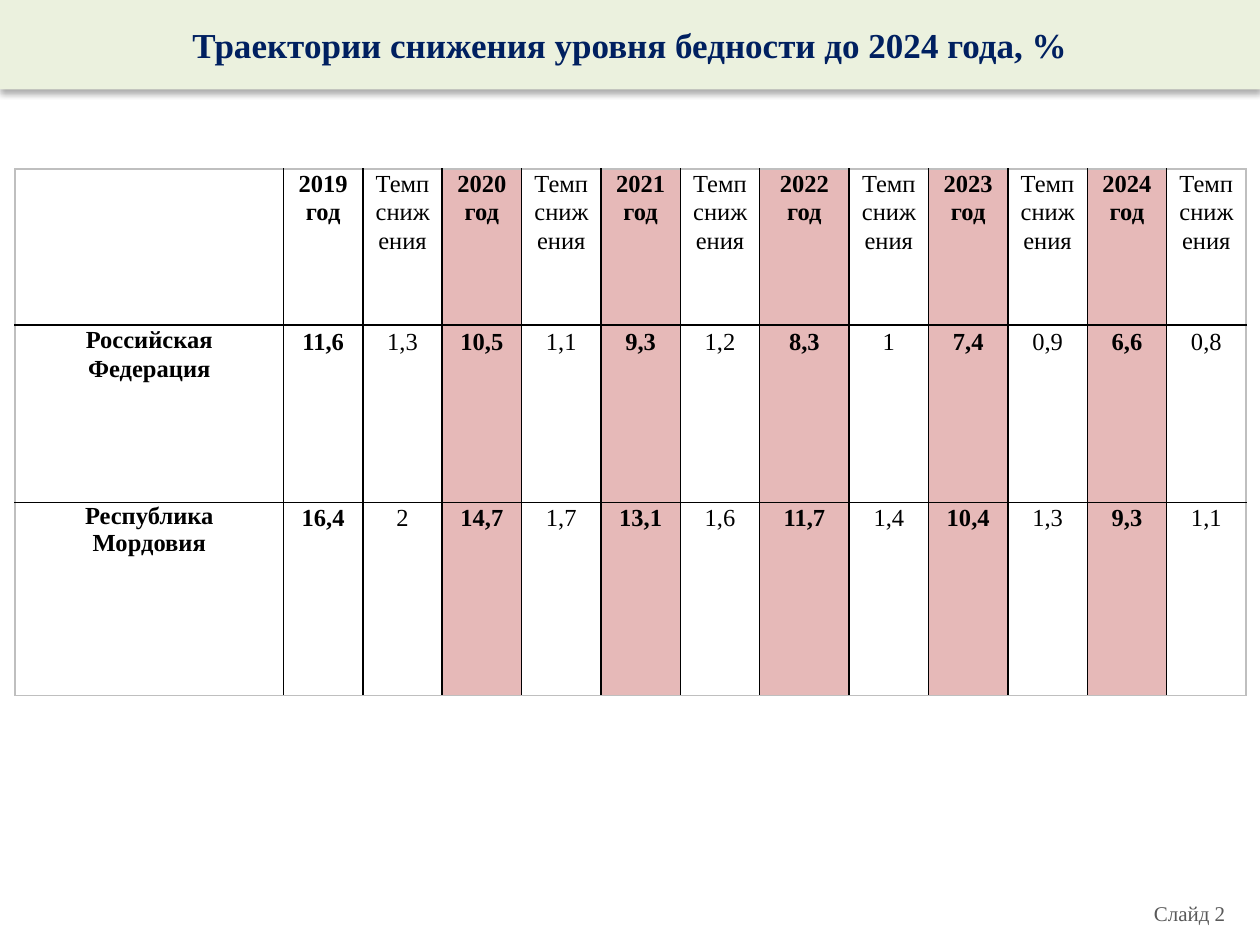
"""Build a slide with a table of poverty reduction paths up to 2024."""
from dataclasses import dataclass

import pptx
import pptx.dml.color
import pptx.enum.shapes
import pptx.enum.text
import pptx.oxml
import pptx.oxml.ns
import pptx.util
from pptx.util import Inches


@dataclass(frozen=True)
class Theme:
    """Colours, font and type sizes of the slide."""
    font: str = "Times New Roman"
    title: str = "002060"
    banner: str = "EBF1DE"
    text: str = "000000"
    footer: str = "595959"
    highlight: str = "E6B9B8"
    grid: str = "000000"
    frame: str = "BFBFBF"
    title_size: int = 20
    table_size: int = 14
    footer_size: int = 12


THEME = Theme()
YEARS = range(2019, 2025)
COLUMN_WIDTHS = [2.13] + [0.63] * 6 + [0.71] + [0.63] * 5
ROW_HEIGHTS = [1.24, 1.41, 1.53]
LINE_SPACINGS = [1.06, 1.15, 1.06]
LABEL_SPACINGS = [1.06, 1.06, 1.0]
ROWS = [
    [""] + [text for year in YEARS for text in (f"{year}\nгод", "Темп снижения")],
    ["Российская Федерация", "11,6", "1,3", "10,5", "1,1", "9,3", "1,2",
     "8,3", "1", "7,4", "0,9", "6,6", "0,8"],
    ["Республика\nМордовия", "16,4", "2", "14,7", "1,7", "13,1", "1,6",
     "11,7", "1,4", "10,4", "1,3", "9,3", "1,1"],
]


def rgb(colour):
    """Turn a hex string into a colour."""
    return pptx.dml.color.RGBColor.from_string(colour)


def style_paragraph(para, size, colour, bold=False, centred=True):
    """Set the font and alignment of a paragraph."""
    para.font.name = THEME.font
    para.font.size = pptx.util.Pt(size)
    para.font.bold = bold
    para.font.color.rgb = rgb(colour)
    if centred:
        para.alignment = pptx.enum.text.PP_ALIGN.CENTER


def add_shadow(shape):
    """Give a shape a soft shadow that falls downwards."""
    blur, distance = pptx.util.Pt(3.5), pptx.util.Pt(2.2)
    shape._element.spPr.append(pptx.oxml.parse_xml(
        f'<a:effectLst {pptx.oxml.ns.nsdecls("a")}>'
        f'<a:outerShdw blurRad="{blur}" dist="{distance}" dir="5400000" rotWithShape="0">'
        '<a:srgbClr val="000000"><a:alpha val="32000"/></a:srgbClr>'
        '</a:outerShdw></a:effectLst>'))


def add_banner(page, text):
    """Add the title banner across the top."""
    banner = page.shapes.add_shape(
        pptx.enum.shapes.MSO_SHAPE.RECTANGLE, 0, 0, Inches(10), Inches(0.71))
    banner.fill.solid()
    banner.fill.fore_color.rgb = rgb(THEME.banner)
    banner.line.fill.background()
    add_shadow(banner)
    banner.text_frame.vertical_anchor = pptx.enum.text.MSO_ANCHOR.MIDDLE
    para = banner.text_frame.paragraphs[0]
    para.text = text
    style_paragraph(para, THEME.title_size, THEME.title, bold=True)


def add_footer(page, text):
    """Add the slide number label."""
    box = page.shapes.add_textbox(Inches(9.06), Inches(7.1), Inches(0.94), Inches(0.3))
    box.text_frame.word_wrap = True
    para = box.text_frame.paragraphs[0]
    para.text = text
    style_paragraph(para, THEME.footer_size, THEME.footer, centred=False)


def set_borders(cell, row, column):
    """Draw grey lines on the table's edge and black lines inside it."""
    edges = {
        "lnL": column == 0,
        "lnR": column == len(COLUMN_WIDTHS) - 1,
        "lnT": row == 0,
        "lnB": row == len(ROW_HEIGHTS) - 1,
    }
    properties = cell._tc.get_or_add_tcPr()
    for tag, outer in edges.items():
        colour = THEME.frame if outer else THEME.grid
        properties.append(pptx.oxml.parse_xml(
            f'<a:{tag} {pptx.oxml.ns.nsdecls("a")} w="{pptx.util.Pt(1)}"><a:solidFill>'
            f'<a:srgbClr val="{colour}"/></a:solidFill></a:{tag}>'))


def fill_cell(cell, row, column, text):
    """Write and style one table cell."""
    set_borders(cell, row, column)
    cell.margin_left = cell.margin_right = Inches(0.07)
    cell.margin_top = cell.margin_bottom = 0
    is_year = column % 2 == 1
    if is_year and column > 1:
        cell.fill.solid()
        cell.fill.fore_color.rgb = rgb(THEME.highlight)
    else:
        cell.fill.background()
    cell.text = text
    spacings = LINE_SPACINGS if column else LABEL_SPACINGS
    for para in cell.text_frame.paragraphs:
        style_paragraph(para, THEME.table_size, THEME.text, bold=is_year or column == 0)
        para.line_spacing = spacings[row]


def add_rates_table(page):
    """Add the table of poverty rates and reductions."""
    table = page.shapes.add_table(
        len(ROW_HEIGHTS), len(COLUMN_WIDTHS), Inches(0.12), Inches(1.34),
        Inches(sum(COLUMN_WIDTHS)), Inches(sum(ROW_HEIGHTS))).table
    table.first_row = table.horz_banding = False
    for column, width in zip(table.columns, COLUMN_WIDTHS):
        column.width = Inches(width)
    for row, height in zip(table.rows, ROW_HEIGHTS):
        row.height = Inches(height)
    for row, texts in enumerate(ROWS):
        for column, text in enumerate(texts):
            fill_cell(table.cell(row, column), row, column, text)


def main():
    """Build and save the deck."""
    deck = pptx.Presentation()
    deck.slide_width, deck.slide_height = Inches(10), Inches(7.5)
    page = deck.slides.add_slide(deck.slide_layouts[6])
    add_footer(page, "Слайд 2")
    add_rates_table(page)
    add_banner(page, "Траектории снижения уровня бедности до 2024 года, %")
    deck.save("out.pptx")


if __name__ == "__main__":
    main()
